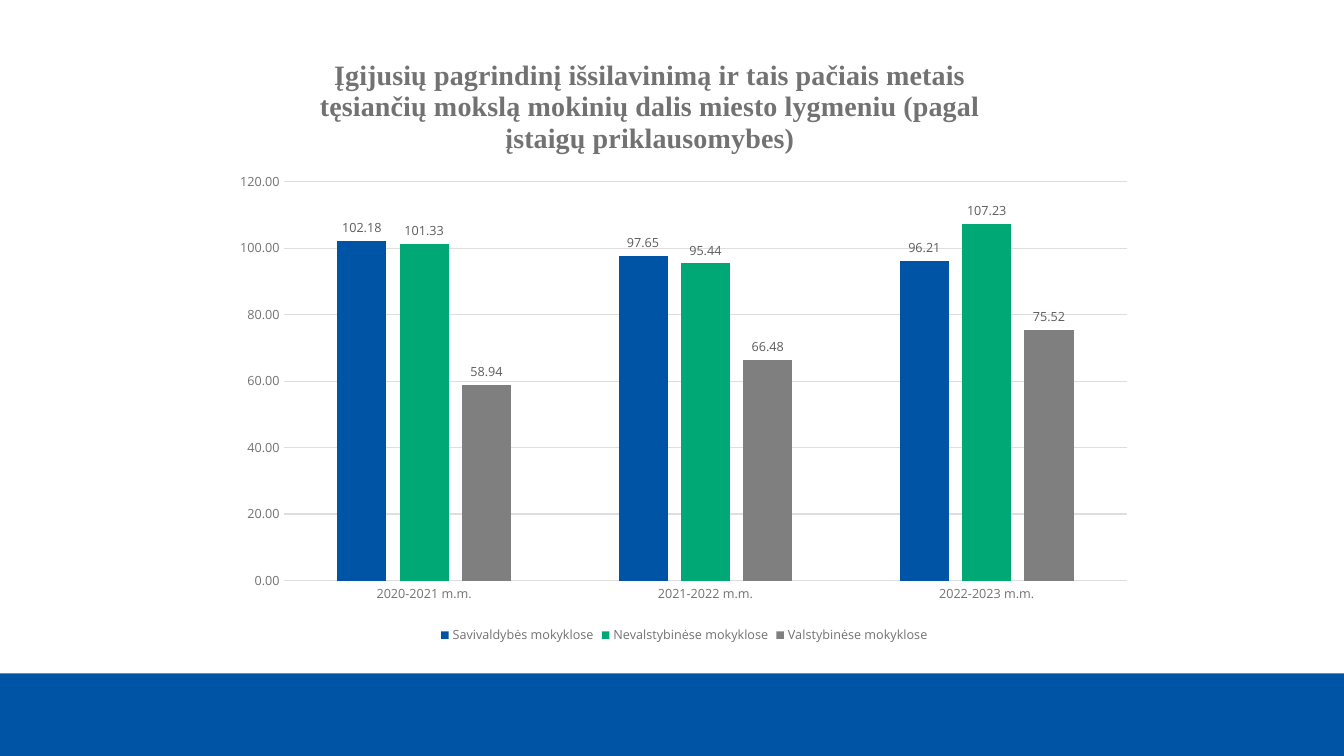
"""Build a slide charting pupils who continue their studies, by school ownership."""
from lxml import etree
from pptx import Presentation
from pptx.chart import data as cd
from pptx.dml.color import RGBColor
from pptx.enum import chart as ec, shapes
from pptx.oxml import ns
from pptx.util import Pt


def style_font(font, size, color, name="Open Sans", bold=False):
    for key, value in {"size": Pt(size), "name": name, "bold": bold}.items():
        setattr(font, key, value)
    font.color.rgb = RGBColor.from_string(color)


def set_layout(parent, index, values):
    for old in parent.findall(ns.qn("c:layout")):
        parent.remove(old)
    layout = etree.Element(ns.qn("c:layout"))
    manual = etree.SubElement(layout, ns.qn("c:manualLayout"))
    for key, value in values.items():
        etree.SubElement(manual, ns.qn(f"c:{key}")).set("val", str(value))
    parent.insert(index, layout)


TITLE = ("Įgijusių pagrindinį išsilavinimą ir tais pačiais metais tęsiančių mokslą "
         "mokinių dalis miesto lygmeniu (pagal įstaigų priklausomybes)")
YEARS = ["2020-2021 m.m.", "2021-2022 m.m.", "2022-2023 m.m."]
SCHOOLS = [
    ("Savivaldybės mokyklose", "0054A5", (102.18, 97.65, 96.21)),
    ("Nevalstybinėse mokyklose", "00A875", (101.33, 95.44, 107.23)),
    ("Valstybinėse mokyklose", "7F7F7F", (58.94, 66.48, 75.52)),
]

prs = Presentation()
prs.slide_width, prs.slide_height = Pt(960), Pt(540)
s = prs.slides.add_slide(prs.slide_layouts[6])

band = s.shapes.add_shape(shapes.MSO_SHAPE.RECTANGLE, Pt(0), Pt(481), Pt(960), Pt(59))
band.shadow.inherit = False
band.fill.solid()
band.fill.fore_color.rgb = RGBColor.from_string("0054A5")
band.line.fill.background()

data = cd.CategoryChartData(number_format="0.00")
data.categories = YEARS
for name, color, values in SCHOOLS:
    data.add_series(name, values)
chart = s.shapes.add_chart(ec.XL_CHART_TYPE.COLUMN_CLUSTERED, Pt(159), Pt(28),
                           Pt(659.5), Pt(435), data).chart
style_font(chart.font, 10, "262626")

chart.has_title = True
p = chart.chart_title.text_frame.paragraphs[0]
r = p.add_run()
r.text = TITLE
style_font(r.font, 20, "727272", "Times New Roman", True)
set_layout(chart.chart_title.element, 1,
           {"xMode": "edge", "yMode": "edge", "x": 0.1, "y": 0.02})
set_layout(chart.element.find(".//" + ns.qn("c:plotArea")), 0,
           {"layoutTarget": "inner", "xMode": "edge", "yMode": "edge",
            "x": 0.066, "y": 0.234, "w": 0.914, "h": 0.655})

chart.has_legend = True
chart.legend.position = ec.XL_LEGEND_POSITION.BOTTOM
chart.legend.include_in_layout = False
style_font(chart.legend.font, 9, "727272")

years, share = chart.category_axis, chart.value_axis
for axis in (years, share):
    axis.major_tick_mark = axis.minor_tick_mark = ec.XL_TICK_MARK.NONE
    style_font(axis.tick_labels.font, 9, "727272")
for line in (years.format.line, share.major_gridlines.format.line):
    line.color.rgb = RGBColor.from_string("DEDEDE")
    line.width = Pt(0.75)
share.format.line.fill.background()
for key, value in {"minimum_scale": 0, "maximum_scale": 120, "major_unit": 20}.items():
    setattr(share, key, value)
share.tick_labels.number_format = "0.00"
share.tick_labels.number_format_is_linked = False

plot = chart.plots[0]
for key, value in {"gap_width": 219, "overlap": -27, "vary_by_categories": False}.items():
    setattr(plot, key, value)
for series, (name, color, values) in zip(plot.series, SCHOOLS):
    series.format.fill.solid()
    series.format.fill.fore_color.rgb = RGBColor.from_string(color)
    labels = series.data_labels
    for key, value in {"show_value": True, "number_format": "0.00",
                       "number_format_is_linked": False,
                       "position": ec.XL_LABEL_POSITION.OUTSIDE_END}.items():
        setattr(labels, key, value)
    style_font(labels.font, 9, "5C5C5C")

prs.save("out.pptx")
